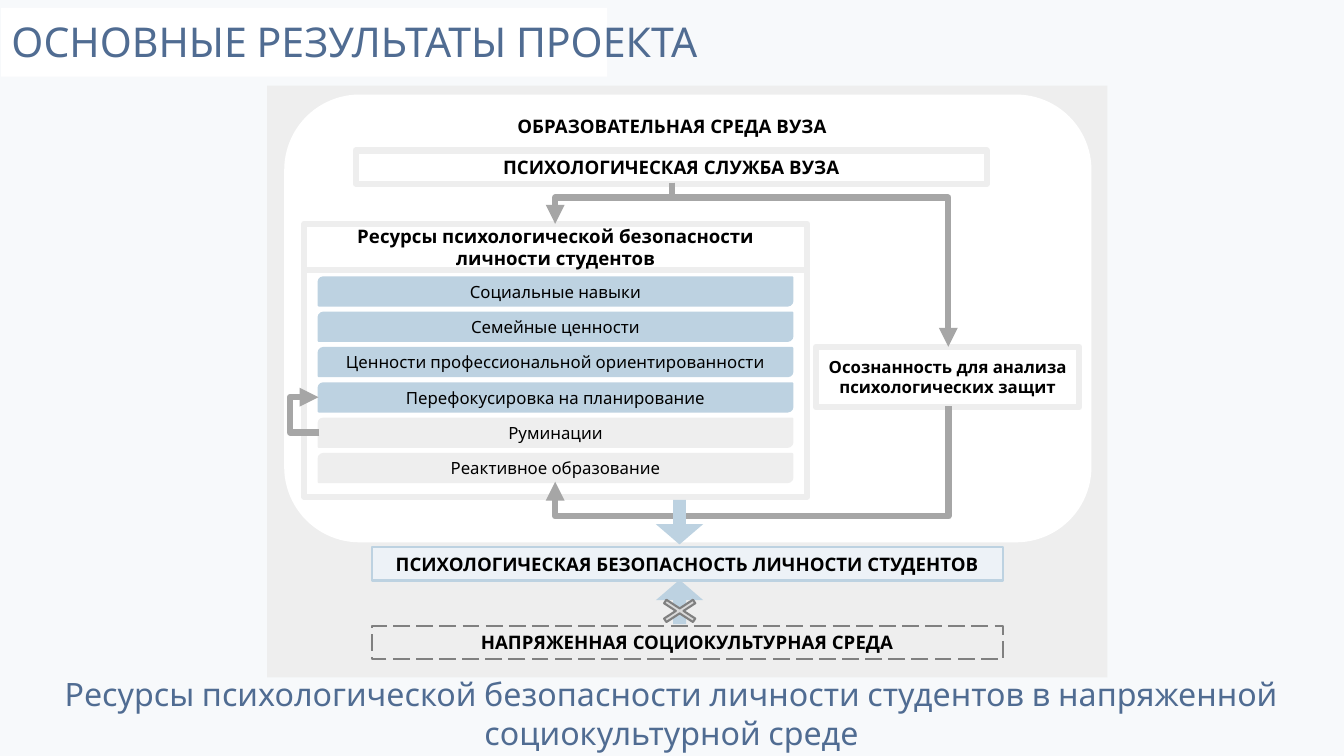
from dataclasses import dataclass

from lxml import etree
from pptx import Presentation
from pptx.dml.color import RGBColor
from pptx.enum.dml import MSO_LINE
from pptx.enum.shapes import MSO_CONNECTOR, MSO_SHAPE
from pptx.enum.text import MSO_ANCHOR, PP_ALIGN
from pptx.oxml.ns import qn
from pptx.util import Cm, Pt

RECT = MSO_SHAPE.RECTANGLE
ROUND = MSO_SHAPE.ROUNDED_RECTANGLE
ROW = MSO_SHAPE.ROUND_2_DIAG_RECTANGLE
ARROW = MSO_SHAPE.DOWN_ARROW
CROSS = MSO_SHAPE.MATH_MULTIPLY
ELBOW = MSO_CONNECTOR.ELBOW
LONG_DASH = MSO_LINE.LONG_DASH
CENTER, LEFT = PP_ALIGN.CENTER, PP_ALIGN.LEFT
TOP, MIDDLE = MSO_ANCHOR.TOP, MSO_ANCHOR.MIDDLE


@dataclass(frozen=True)
class Theme:
    page: str = "F7F9FB"
    white: str = "FFFFFF"
    black: str = "000000"
    heading: str = "506C92"
    gray: str = "EEEEEE"
    blue: str = "BDD2E1"
    pale: str = "EDF2F7"
    arrow: str = "A6A6A6"
    border: str = "808080"
    cross: str = "D9D9D9"
    title_font: str = "Karla"
    body_font: str = "League Spartan"
    title_size: float = 29.3
    caption_size: float = 23
    label_size: float = 13.3
    small_size: float = 12
    thin: float = 1.5
    thick: float = 4.5


T = Theme()
RESOURCES = [
    ("Социальные навыки", T.blue),
    ("Семейные ценности", T.blue),
    ("Ценности профессиональной ориентированности", T.blue),
    ("Перефокусировка на планирование", T.blue),
    ("Руминации", T.gray),
    ("Реактивное образование", T.gray),
]


def rgb(value):
    return RGBColor.from_string(value)


def write(sp, text, size=T.label_size, font=T.body_font, color=T.black,
          bold=True, align=CENTER, anchor=MIDDLE, inset=None):
    tf = sp.text_frame
    tf.word_wrap = True
    tf.vertical_anchor = anchor
    if inset is not None:
        tf.margin_left = tf.margin_right = Cm(inset)
        tf.margin_top = tf.margin_bottom = Cm(inset)
    for i, line in enumerate(text.split("\n")):
        p = tf.add_paragraph() if i else tf.paragraphs[0]
        p.alignment = align
        r = p.add_run()
        r.text = line
        r.font.size = Pt(size)
        r.font.name = font
        r.font.bold = bold
        r.font.color.rgb = rgb(color)


def add_text(slide, box, text, **style):
    sp = slide.shapes.add_textbox(*map(Cm, box))
    write(sp, text, anchor=TOP, **style)


def add_shape(slide, kind, box, fill, line=None, weight=T.thin, dash=None,
              adjust=(), rotation=0, text=None, **style):
    sp = slide.shapes.add_shape(kind, *map(Cm, box))
    sp.shadow.inherit = False
    sp.fill.solid()
    sp.fill.fore_color.rgb = rgb(fill)
    if line:
        sp.line.color.rgb = rgb(line)
        sp.line.width = Pt(weight)
        if dash:
            sp.line.dash_style = dash
    else:
        sp.line.fill.background()
    for i, value in enumerate(adjust):
        sp.adjustments[i] = value
    sp.rotation = rotation
    if text:
        write(sp, text, **style)


def add_elbow(slide, start, end, bend, vertical=True):
    (x1, y1), (x2, y2) = start, end
    if vertical:
        w, h = y2 - y1, abs(x2 - x1)
        left, top = (x1 + x2 - w) / 2, (y1 + y2 - h) / 2
        ends = (left, top, left + w, top + h)
        turn = 90
        if x2 > x1:
            ends = (left + w, top, left, top + h)
            turn = 270
        ratio = (bend - y1) / (y2 - y1)
    else:
        ends, turn = (x1, y1, x2, y2), 0
        ratio = (bend - x1) / (x2 - x1)
    cx = slide.shapes.add_connector(ELBOW, *map(Cm, ends))
    cx.line.color.rgb = rgb(T.arrow)
    cx.line.width = Pt(T.thick)
    props = cx._element.spPr
    props.find(qn("a:xfrm")).set("rot", str(turn * 60000))
    guides = props.find(qn("a:prstGeom")).find(qn("a:avLst"))
    etree.SubElement(guides, qn("a:gd"), name="adj1", fmla=f"val {round(ratio * 100000)}")
    etree.SubElement(props.find(qn("a:ln")), qn("a:tailEnd"), type="triangle")
    etree.SubElement(props, qn("a:effectLst"))


def build_title(slide, x, y):
    add_shape(slide, RECT, (x, y, 15.27, 1.73), T.white)
    add_text(slide, (x + 0.18, y + 0.13, 18.36, 1.42), "ОСНОВНЫЕ РЕЗУЛЬТАТЫ ПРОЕКТА",
             size=T.title_size, font=T.title_font, color=T.heading,
             bold=False, align=LEFT, inset=0.08)


def build_caption(slide, box):
    add_text(slide, box, "Ресурсы психологической безопасности личности студентов "
             "в напряженной социокультурной среде",
             size=T.caption_size, font=T.title_font, color=T.heading, bold=False)


def build_resources(slide, x, y):
    frame = dict(fill=T.white, line=T.gray, weight=T.thick)
    add_shape(slide, RECT, (x, y + 0.05, 12.67, 6.83), **frame)
    add_shape(slide, RECT, (x, y, 12.67, 1.17), **frame,
              text="Ресурсы психологической безопасности\nличности студентов")
    for i, (name, color) in enumerate(RESOURCES):
        add_shape(slide, ROW, (x + 0.36, y + 1.35 + i * 0.89, 11.94, 0.71),
                  color, color, text=name, size=T.small_size, bold=False)


def build_diagram(slide, x, y, w, h):
    def at(dx, dy):
        return x + dx, y + dy

    bar, block = (15.9, 0.84), (1.19, 1.12)
    block_adjust = (0.273, 0.456)
    add_shape(slide, RECT, (x, y, w, h), T.gray)
    add_shape(slide, RECT, at(2.64, 13.61) + bar, T.gray, T.border, dash=LONG_DASH,
              text="НАПРЯЖЕННАЯ СОЦИОКУЛЬТУРНАЯ СРЕДА")
    add_shape(slide, ARROW, at(9.8, 12.45) + block, T.blue,
              adjust=block_adjust, rotation=180)
    add_shape(slide, RECT, at(2.64, 11.63) + bar, T.pale, T.blue,
              text="ПСИХОЛОГИЧЕСКАЯ БЕЗОПАСНОСТЬ ЛИЧНОСТИ СТУДЕНТОВ")
    add_shape(slide, ROUND, at(0.46, 0.25) + (20.29, 11.23), T.white, T.white)
    add_shape(slide, CROSS, at(9.7, 12.78) + (1.4, 0.91), T.cross, T.border,
              adjust=(0.116,))
    add_text(slide, at(3.86, 0.61) + (12.7, 0.84), "ОБРАЗОВАТЕЛЬНАЯ СРЕДА ВУЗА")
    add_shape(slide, RECT, at(2.24, 1.63) + bar, T.white, T.gray, T.thick,
              text="ПСИХОЛОГИЧЕСКАЯ СЛУЖБА ВУЗА")
    build_resources(slide, *at(0.94, 3.48))
    add_shape(slide, RECT, at(13.84, 6.58) + (6.63, 1.52), T.white, T.gray, T.thick,
              text="Осознанность для анализа психологических защит", size=T.small_size)
    service = at(10.21, 2.44)
    add_elbow(slide, service, at(7.26, 3.48), y + 2.82)
    add_elbow(slide, service, at(17.17, 6.58), y + 2.82)
    add_elbow(slide, at(17.17, 8.08), at(7.26, 9.98), y + 10.85)
    add_elbow(slide, at(1.32, 8.74), at(1.3, 7.85), x + 0.58, vertical=False)
    add_shape(slide, ARROW, at(9.8, 10.44) + block, T.blue, adjust=block_adjust)


def main():
    prs = Presentation()
    prs.slide_width, prs.slide_height = Cm(33.87), Cm(19.05)
    slide = prs.slides.add_slide(prs.slide_layouts[6])
    slide.background.fill.solid()
    slide.background.fill.fore_color.rgb = rgb(T.page)
    build_caption(slide, (0.61, 16.87, 32.64, 2.31))
    build_diagram(slide, 6.73, 2.16, 21.18, 14.91)
    build_title(slide, 0.03, 0.2)
    prs.save("out.pptx")


if __name__ == "__main__":
    main()
